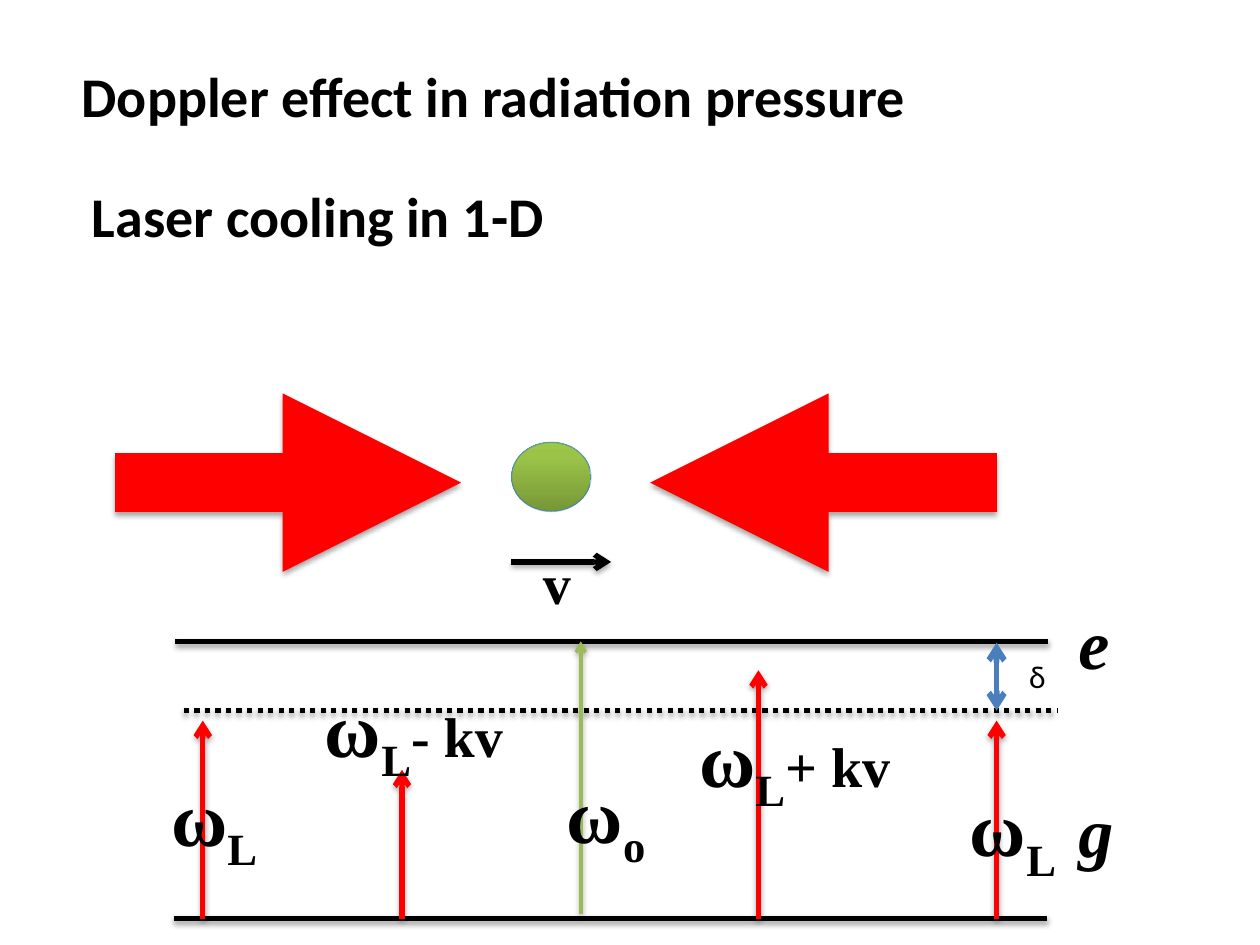
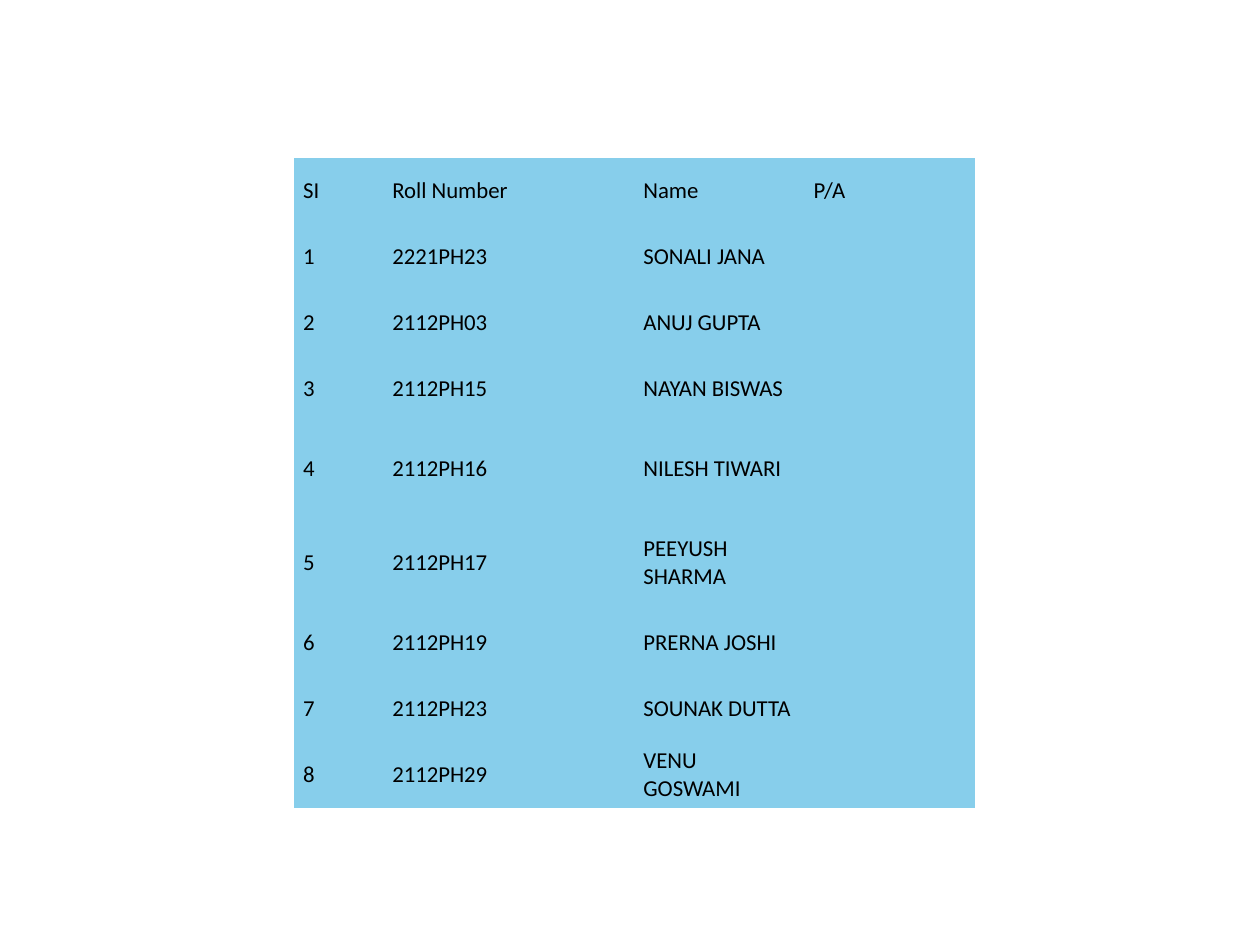
from copy import deepcopy

from lxml import etree
from pptx import Presentation
from pptx import util as u
from pptx.dml.color import RGBColor
from pptx.enum import dml, shapes, text
from pptx.oxml.ns import qn

Pt = u.Pt
COLORS = {
    "ink": "000000", "laser": "FF0000", "resonance": "9BBB59",
    "detuning": "4B7EBC", "atom_edge": "0066FF", "table": "87CEEB",
}
ATOM_STOPS = [(0, "779737"), (0.8, "9BC348"), (1, "9DC746")]
SANS, SERIF = "Calibri", "Times New Roman"
NO_GRID_STYLE = "{2D5ABB26-0587-4C30-8999-92F81FD0307C}"


def add_line(slide, start, end, color, width, tail=None, head=None,
             dash=None, shadow=True):
    """Draw a straight line; the tail arrowhead sits at its end."""
    connector = slide.shapes.add_connector(
        shapes.MSO_CONNECTOR.STRAIGHT, *(Pt(v) for v in (*start, *end)))
    connector.line.color.rgb = RGBColor.from_string(COLORS[color])
    connector.line.width = Pt(width)
    if dash:
        connector.line.dash_style = dash
    ln = connector.line._get_or_add_ln()
    for tag, arrowhead in (("a:headEnd", head), ("a:tailEnd", tail)):
        if arrowhead:
            etree.SubElement(ln, qn(tag), type=arrowhead)
    effects = etree.SubElement(connector._element.spPr, qn("a:effectLst"))
    if shadow:
        outer = etree.SubElement(
            effects, qn("a:outerShdw"), blurRad=str(Pt(3.15)),
            dist=str(Pt(1.8)), dir="5400000", rotWithShape="0")
        black = etree.SubElement(outer, qn("a:srgbClr"), val=COLORS["ink"])
        etree.SubElement(black, qn("a:alpha"), val="35000")


def add_label(slide, box, runs, font, bold=True, italic=False):
    """Add one line of text; runs are (text, size, is_subscript)."""
    frame = slide.shapes.add_textbox(*(Pt(v) for v in box)).text_frame
    frame.word_wrap = False
    frame.auto_size = text.MSO_AUTO_SIZE.SHAPE_TO_FIT_TEXT
    paragraph = frame.paragraphs[0]
    paragraph.font.name = font
    paragraph.font.bold = bold
    paragraph.font.italic = italic
    paragraph.font.color.rgb = RGBColor.from_string(COLORS["ink"])
    paragraph.font.size = Pt(runs[0][1])
    for words, size, subscript in runs:
        run = paragraph.add_run()
        run.text = words
        if size != runs[0][1]:
            run.font.size = Pt(size)
        if subscript:
            run._r.get_or_add_rPr().set("baseline", "-25000")


prs = Presentation()
prs.slide_width, prs.slide_height = Pt(720), Pt(540)
blank = prs.slide_layouts[6]

# Slide 1: Doppler effect and laser cooling
doppler = prs.slides.add_slide(blank)
for heading, box in [
    ("Doppler effect in radiation pressure", (39.6, 31.7, 490.3, 46)),
    ("Laser cooling in 1-D", (45.4, 100.1, 275, 46)),
]:
    add_label(doppler, box, [(heading, 32, False)], SANS)

# Opposing laser beams
beam_y = 275.8
for beam_start, beam_end in [(65.5, 263.5), (569.5, 371.5)]:
    add_line(doppler, (beam_start, beam_y), (beam_end, beam_y), "laser", 34,
             tail="triangle")

# Atom and its velocity
atom = doppler.shapes.add_shape(
    shapes.MSO_SHAPE.OVAL, Pt(292.3), Pt(252.7), Pt(45.4), Pt(39.6))
atom.shadow.inherit = False
atom.fill.gradient()
atom.fill.gradient_angle = 90
stop_list = atom._element.spPr.find(".//" + qn("a:gsLst"))
stop_list.append(deepcopy(stop_list[1]))
for stop, (position, color) in zip(atom.fill.gradient_stops, ATOM_STOPS):
    stop.position = position
    stop.color.rgb = RGBColor.from_string(color)
atom.line.width = Pt(0.75)
atom.line.color.rgb = RGBColor.from_string(COLORS["atom_edge"])
edge_color = atom.line._get_or_add_ln().find(".//" + qn("a:srgbClr"))
etree.SubElement(edge_color, qn("a:alpha"), val="39000")
add_line(doppler, (292.3, 321.1), (349.2, 321.1), "ink", 3, tail="arrow")

# Energy levels: excited, ground, detuned
excited_y, detuned_y, ground_y = 366.5, 406.1, 524.9
level_width = 499
for left, level_y, dash in [
    (100.1, excited_y, None),
    (99.4, ground_y, None),
    (105.1, detuned_y, dml.MSO_LINE.ROUND_DOT),
]:
    add_line(doppler, (left, level_y), (left + level_width, level_y),
             "ink", 3, dash=dash)

# Transitions
add_line(doppler, (331.9, 522), (331.9, excited_y), "resonance", 2,
         tail="arrow")
for x, top in [(115.9, 411.8), (569.5, 411.8), (229.7, 439.9), (433.4, 383)]:
    add_line(doppler, (x, ground_y), (x, top), "laser", 3, tail="arrow")
add_line(doppler, (569.5, excited_y + 0.7), (569.5, detuned_y), "detuning",
         3.25, tail="arrow", head="arrow", shadow=False)

# Frequency labels
for left, top, width, subscript, shift in [
    (547.2, 442.1, 67, "L", None),
    (90.7, 436.3, 67, "L", None),
    (316.8, 434.2, 61.9, "o", None),
    (178.6, 385.2, 119.5, "L", "- kv"),
    (392.4, 402.5, 127.4, "L", "+ kv"),
]:
    runs = [("ω", 44, False), (subscript, 44, True)]
    if shift:
        runs.append((shift, 32, False))
    add_label(doppler, (left, top, width, 60.5), runs, SERIF)

# Velocity, level and detuning labels
for symbol, box, size, font, bold, italic in [
    ("v", (303.1, 309.6, 31, 46), 32, SERIF, True, False),
    ("e", (609.1, 339.1, 32.4, 55.4), 40, SERIF, True, True),
    ("g", (609.1, 446.4, 34.6, 55.4), 40, SERIF, True, True),
    ("δ", (581, 372.2, 23.8, 28.8), 18, SANS, False, False),
]:
    add_label(doppler, box, [(symbol, size, False)], font, bold, italic)

# Slide 2: attendance table
attendance = prs.slides.add_slide(blank)
header = ("SI", "Roll Number", "Name", "P/A")
students = [
    ("2221PH23", "SONALI JANA"),
    ("2112PH03", "ANUJ GUPTA"),
    ("2112PH15", "NAYAN BISWAS"),
    ("2112PH16", "NILESH TIWARI"),
    ("2112PH17", "PEEYUSH SHARMA"),
    ("2112PH19", "PRERNA JOSHI"),
    ("2112PH23", "SOUNAK DUTTA"),
    ("2112PH29", "VENU GOSWAMI"),
]
rows = [header] + [(str(number), roll, name, "")
                   for number, (roll, name) in enumerate(students, 1)]
column_widths = [51, 143.5, 97.2, 97.2]
row_height, tall_row_height, tall_rows = 37.7, 53.9, (4, 5)

roster = attendance.shapes.add_table(
    len(rows), len(header), Pt(168), Pt(90.2), Pt(388.9), Pt(371.7)).table
roster.horz_banding = roster.first_row = False
roster._tbl.tblPr.find(qn("a:tableStyleId")).text = NO_GRID_STYLE
for column, width in zip(roster.columns, column_widths):
    column.width = Pt(width)
for r, values in enumerate(rows):
    roster.rows[r].height = Pt(tall_row_height if r in tall_rows else row_height)
    for c, value in enumerate(values):
        cell = roster.cell(r, c)
        cell.fill.solid()
        cell.fill.fore_color.rgb = RGBColor.from_string(COLORS["table"])
        cell.vertical_anchor = text.MSO_ANCHOR.MIDDLE
        cell.margin_left = cell.margin_right = Pt(5.2)
        cell.margin_top = cell.margin_bottom = Pt(2.6)
        paragraph = cell.text_frame.paragraphs[0]
        paragraph.font.name = SANS
        paragraph.font.size = Pt(13)
        paragraph.font.color.rgb = RGBColor.from_string(COLORS["ink"])
        if value:
            paragraph.add_run().text = value

prs.save("out.pptx")
